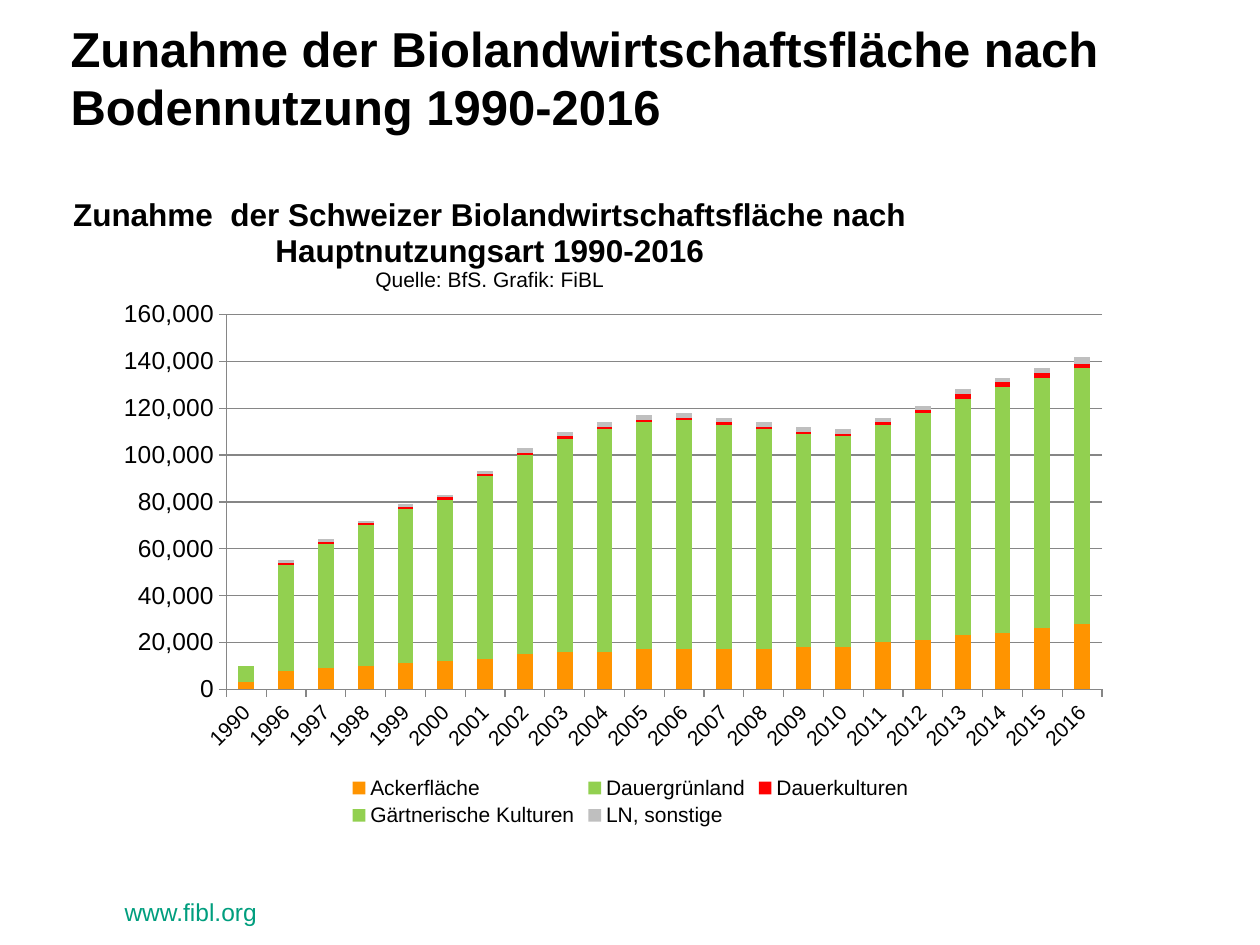
import pptx
import pptx.chart.data
import pptx.dml.color
import pptx.enum.chart
import pptx.enum.text
import pptx.oxml
import pptx.oxml.ns
import pptx.util

Inches = pptx.util.Inches
Pt = pptx.util.Pt
RGBColor = pptx.dml.color.RGBColor

BLACK = RGBColor(0x00, 0x00, 0x00)
TEAL = RGBColor(0x00, 0x9E, 0x7E)
ORANGE = RGBColor(0xFF, 0x94, 0x00)
GREEN = RGBColor(0x92, 0xD0, 0x50)
RED = RGBColor(0xFF, 0x00, 0x00)
SILVER = RGBColor(0xBF, 0xBF, 0xBF)
AXIS_GRAY = RGBColor(0x86, 0x86, 0x86)

YEARS = ["1990"] + [str(year) for year in range(1996, 2017)]

# Land use, colour, area in thousands of hectares
LAND_USE = [
    ("Ackerfläche", ORANGE,
     [3, 8, 9, 10, 11, 12, 13, 15, 16, 16, 17, 17, 17, 17, 18, 18, 20, 21, 23, 24, 26, 28]),
    ("Dauergrünland", GREEN,
     [7, 45, 53, 60, 66, 69, 78, 85, 91, 95, 97, 98, 96, 94, 91, 90, 93, 97, 101, 105, 107, 109]),
    ("Dauerkulturen", RED, [0] + [1] * 17 + [2] * 4),
    ("Gärtnerische Kulturen", GREEN, [0] * 22),
    ("LN, sonstige", SILVER, [0] + [1] * 6 + [2] * 14 + [3]),
]


class SlideBuilder:
    font_name = "Arial"

    def __init__(self, deck):
        self.page = deck.slides.add_slide(deck.slide_layouts[5])

    def style(self, font, size, color=BLACK, bold=False):
        font.name = self.font_name
        font.size = Pt(size)
        font.bold = bold
        font.color.rgb = color

    def title(self, text, left, top, width, height):
        box = self.page.shapes.title
        box.left, box.top = Inches(left), Inches(top)
        box.width, box.height = Inches(width), Inches(height)
        frame = box.text_frame
        frame.text = text
        frame.word_wrap = True
        frame.auto_size = pptx.enum.text.MSO_AUTO_SIZE.NONE
        frame.vertical_anchor = pptx.enum.text.MSO_ANCHOR.MIDDLE
        frame.margin_left = frame.margin_top = 0
        frame.margin_right, frame.margin_bottom = Inches(0.1), Inches(0.05)
        para = frame.paragraphs[0]
        para.alignment = pptx.enum.text.PP_ALIGN.LEFT
        self.style(para.font, 28, bold=True)

    def label(self, text, left, top, width, height):
        box = self.page.shapes.add_textbox(
            Inches(left), Inches(top), Inches(width), Inches(height))
        frame = box.text_frame
        frame.word_wrap = False
        frame.text = text
        self.style(frame.paragraphs[0].font, 14, TEAL)

    def place(self, element, **position):
        """Give a chart part a manual layout in fractions of the chart."""
        values = "".join(f'<c:{key} val="{value}"/>' for key, value in position.items())
        layout = pptx.oxml.parse_xml(
            f'<c:layout {pptx.oxml.ns.nsdecls("c")}><c:manualLayout>{values}'
            '</c:manualLayout></c:layout>')
        for old in element.findall(pptx.oxml.ns.qn("c:layout")):
            element.remove(old)
        text = element.find(pptx.oxml.ns.qn("c:tx"))
        element.insert(0 if text is None else 1, layout)

    def axis(self, axis, size, number_format):
        axis.major_tick_mark = pptx.enum.chart.XL_TICK_MARK.OUTSIDE
        axis.minor_tick_mark = pptx.enum.chart.XL_TICK_MARK.NONE
        axis.format.line.color.rgb = AXIS_GRAY
        axis.format.line.width = Pt(0.75)
        labels = axis.tick_labels
        labels.number_format = number_format
        labels.number_format_is_linked = False
        self.style(labels.font, size)

    def stacked_chart(self, headline, source, left, top, width, height):
        data = pptx.chart.data.CategoryChartData(number_format="#,##0")
        data.categories = YEARS
        for name, _, areas in LAND_USE:
            data.add_series(name, [area * 1000 for area in areas])
        chart = self.page.shapes.add_chart(
            pptx.enum.chart.XL_CHART_TYPE.COLUMN_STACKED,
            Inches(left), Inches(top), Inches(width), Inches(height), data).chart
        self.style(chart.font, 18)

        # Columns
        plot = chart.plots[0]
        plot.gap_width, plot.overlap = 150, 100
        plot.vary_by_categories = False
        for series, (_, color, _) in zip(plot.series, LAND_USE):
            series.format.fill.solid()
            series.format.fill.fore_color.rgb = color

        # Axes
        self.axis(chart.category_axis, 12, "0")
        rotation = chart.category_axis.tick_labels.font._element.getparent().getparent()
        rotation.getparent().find(pptx.oxml.ns.qn("a:bodyPr")).set("rot", "-2700000")
        self.axis(chart.value_axis, 14, "#,##0")
        chart.value_axis.minimum_scale = 0
        chart.value_axis.maximum_scale = 160000
        chart.value_axis.major_unit = 20000
        grid = chart.value_axis.major_gridlines.format.line
        grid.color.rgb = AXIS_GRAY
        grid.width = Pt(0.75)

        # Heading and source
        chart.has_title = True
        frame = chart.chart_title.text_frame
        frame.text = headline
        self.style(frame.paragraphs[0].runs[0].font, 18, bold=True)
        para = frame.add_paragraph()
        span = para.add_run()
        span.text = source
        self.style(span.font, 12)
        chart.chart_title.include_in_layout = True
        self.place(chart.chart_title._element, xMode="edge", yMode="edge", x=0, y=0.01)

        # Legend and plot area
        chart.has_legend = True
        chart.legend.position = pptx.enum.chart.XL_LEGEND_POSITION.BOTTOM
        chart.legend.include_in_layout = False
        self.style(chart.legend.font, 12)
        self.place(plot._element.getparent(), layoutTarget="inner", xMode="edge",
                   yMode="edge", x=0.14, y=0.2, w=0.78, h=0.58)


def main():
    deck = pptx.Presentation()
    deck.slide_width, deck.slide_height = Inches(10), Inches(7.5)
    builder = SlideBuilder(deck)
    builder.label("www.fibl.org", 0.89, 7.07, 1.26, 0.34)
    builder.title("Zunahme der Biolandwirtschaftsfläche nach Bodennutzung 1990-2016",
                  0.56, 0.36, 9.02, 0.55)
    builder.stacked_chart(
        "Zunahme  der Schweizer Biolandwirtschaftsfläche nach Hauptnutzungsart 1990-2016",
        "Quelle: BfS. Grafik: FiBL", 0.55, 1.47, 8.91, 5.13)
    deck.save("out.pptx")


if __name__ == "__main__":
    main()
